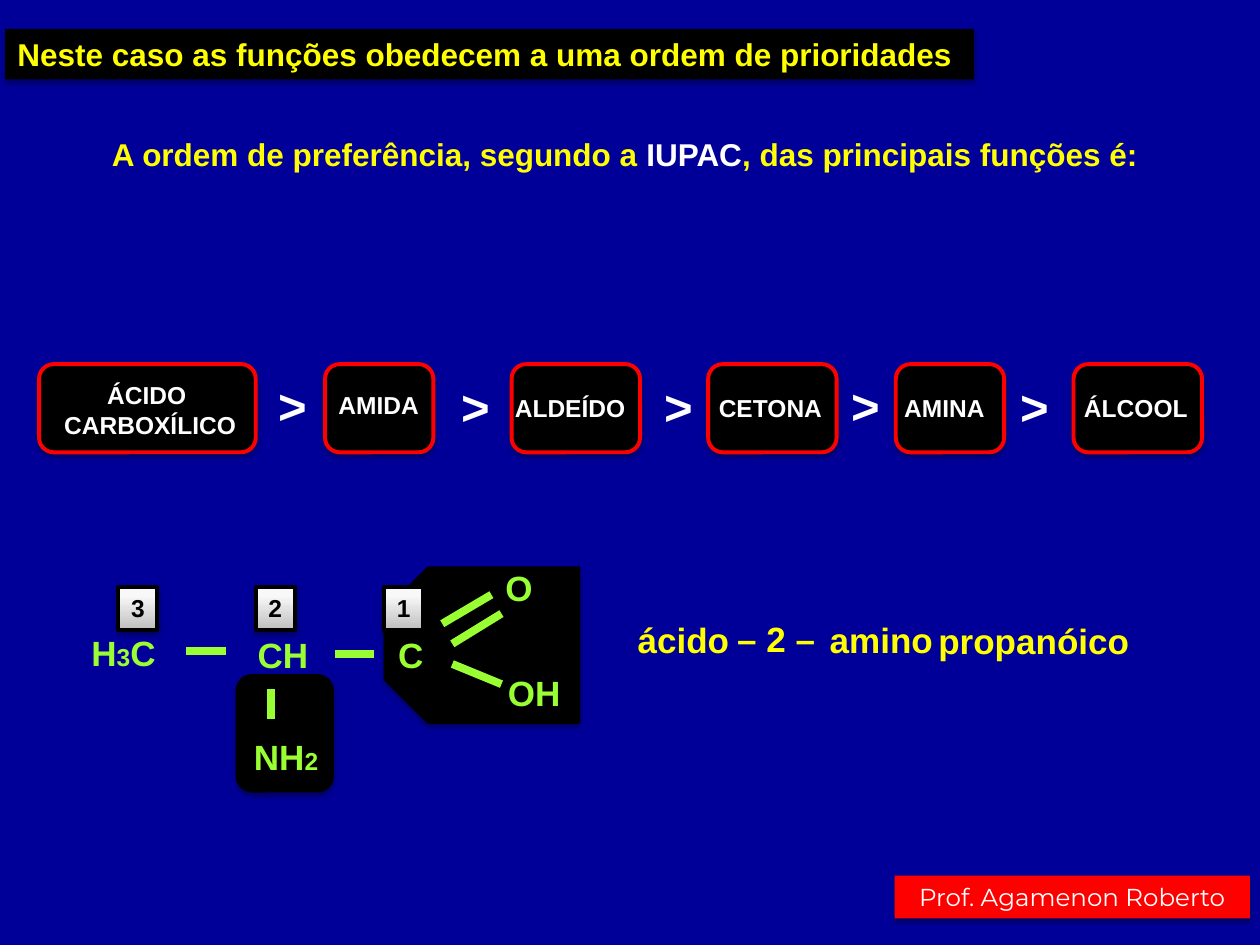
"""Builds the slide on the order of priority of organic functions."""
from lxml import etree
from pptx import Presentation
from pptx.dml.color import RGBColor
from pptx.enum import shapes, text
from pptx.oxml import parse_xml
from pptx.oxml.ns import qn
from pptx.util import Inches, Pt

NAVY = RGBColor(0x00, 0x00, 0x99)
BLACK = RGBColor(0x00, 0x00, 0x00)
WHITE = RGBColor(0xFF, 0xFF, 0xFF)
RED = RGBColor(0xFF, 0x00, 0x00)
YELLOW = RGBColor(0xFF, 0xFF, 0x00)
GREEN = RGBColor(0x99, 0xFF, 0x33)
GREY = RGBColor(0xBE, 0xBE, 0xBE)
PALE = RGBColor(0xF8, 0xF8, 0xF8)
SHADOW = (
    '<a:effectLst xmlns:a="http://schemas.openxmlformats.org/drawingml/2006/main">'
    '<a:outerShdw blurRad="40000" dist="23000" dir="5400000" rotWithShape="0">'
    '<a:srgbClr val="000000"><a:alpha val="35000"/></a:srgbClr>'
    '</a:outerShdw></a:effectLst>'
)

prs = Presentation()
prs.slide_width, prs.slide_height = Inches(10), Inches(7.5)
slide = prs.slides.add_slide(prs.slide_layouts[6])
slide.background.fill.solid()
slide.background.fill.fore_color.rgb = NAVY


def add_panel(kind, at, fill=BLACK, line=None):
    panel = slide.shapes.add_shape(kind, *map(Inches, at))
    panel.fill.solid()
    panel.fill.fore_color.rgb = fill
    if line is None:
        panel.line.fill.background()
    else:
        panel.line.color.rgb = line
        panel.line.width = Pt(2.25)
    panel._element.spPr.append(parse_xml(SHADOW))
    return panel


def write(content, at=None, panel=None, size=20, color=GREEN, bold=True, font="Arial",
          align=text.PP_ALIGN.CENTER, anchor=text.MSO_ANCHOR.TOP):
    """Content is a string, or a list of (text, size, color) runs."""
    holder = panel or slide.shapes.add_textbox(*map(Inches, at))
    frame = holder.text_frame
    frame.word_wrap = False
    frame.auto_size = text.MSO_AUTO_SIZE.SHAPE_TO_FIT_TEXT
    frame.vertical_anchor = anchor
    if isinstance(content, str):
        lines = [[(line, size, color)] for line in content.split("\n")]
    else:
        lines = [content]
    for i, line in enumerate(lines):
        paragraph = frame.add_paragraph() if i else frame.paragraphs[0]
        paragraph.alignment = align
        for words, run_size, run_color in line:
            run = paragraph.add_run()
            run.text = words
            run.font.name, run.font.bold = font, bold
            run.font.size = Pt(run_size)
            run.font.color.rgb = run_color


RECT = shapes.MSO_SHAPE.RECTANGLE
ROUNDED = shapes.MSO_SHAPE.ROUNDED_RECTANGLE
heading = dict(size=18, color=YELLOW, align=text.PP_ALIGN.JUSTIFY, anchor=text.MSO_ANCHOR.MIDDLE)

title = add_panel(RECT, (0.04, 0.23, 7.69, 0.4))
write("Neste caso as funções obedecem a uma ordem de prioridades", panel=title, **heading)
write([("A ordem de preferência, segundo a ", 18, YELLOW), ("IUPAC", 18, WHITE),
       (", das principais funções é:", 18, YELLOW)], at=(0.79, 1.02, 8.42, 0.4), **heading)

functions = [
    ("ÁCIDO\n CARBOXÍLICO", 0.31, 1.72, (0.35, 2.97, 1.63, 0.57)),
    ("AMIDA", 2.58, 0.86, (2.58, 3.05, 0.85, 0.34)),
    ("ALDEÍDO", 4.06, 1.02, (3.98, 3.07, 1.09, 0.34)),
    ("CETONA", 5.62, 1.02, (5.6, 3.07, 1.03, 0.34)),
    ("AMINA", 7.11, 0.86, (7.07, 3.07, 0.85, 0.34)),
    ("ÁLCOOL", 8.52, 1.02, (8.5, 3.07, 1.03, 0.34)),
]
for name, left, width, label_at in functions:
    add_panel(ROUNDED, (left, 2.89, width, 0.7), line=RED)
    write(name, at=label_at, size=14, color=WHITE)
for left, top in [(2.11, 2.93), (3.56, 2.94), (5.17, 2.94), (6.66, 2.93), (8, 2.94)]:
    write(">", at=(left, top, 0.43, 0.57), size=28, color=WHITE)

for part, left, top, width in [("ácido", 4.96, 4.86, 0.93), ("amino", 6.48, 4.86, 1.03),
                               ("– 2 –", 5.75, 4.85, 0.82), ("propanóico", 7.34, 4.87, 1.73)]:
    write(part, at=(left, top, width, 0.44), color=YELLOW)

add_panel(ROUNDED, (1.87, 5.35, 0.78, 0.94))
acid_group = add_panel(shapes.MSO_SHAPE.SNIP_2_SAME_RECTANGLE, (3.2, 4.34, 1.25, 1.56))
acid_group.rotation = 270
acid_group.adjustments[0] = 0.28
acid_group.adjustments[1] = 0

atoms = [
    ("C", 3.06, 4.98, 0.4),
    ("O", 3.91, 4.45, 0.42),
    ("CH", 1.94, 4.98, 0.61),
    ("OH", 3.93, 5.28, 0.62),
    ([("NH", 20, GREEN), ("2", 14, GREEN)], 1.91, 5.79, 0.72),
    ([("H", 20, GREEN), ("3", 14, GREEN), ("C", 20, GREEN)], 0.62, 4.96, 0.72),
]
for symbol, left, top, width in atoms:
    write(symbol, at=(left, top, width, 0.44))

bonds = [
    (3.59, 5.11, 3.98, 4.87),
    (3.51, 4.95, 3.9, 4.72),
    (3.59, 5.27, 3.98, 5.43),
    (2.66, 5.19, 2.97, 5.19),
    (1.48, 5.17, 1.79, 5.17),
    (2.15, 5.47, 2.15, 5.71),
]
for ends in bonds:
    bond = slide.shapes.add_connector(shapes.MSO_CONNECTOR.STRAIGHT, *map(Inches, ends))
    bond.line.color.rgb = GREEN
    bond.line.width = Pt(4.5)
    etree.SubElement(bond._element.spPr, qn("a:effectLst"))

for number, left in [("1", 3.05), ("2", 2.03), ("3", 0.94)]:
    carbon = add_panel(RECT, (left, 4.66, 0.31, 0.34), line=BLACK)
    carbon.fill.gradient()
    carbon.fill.gradient_angle = 90
    for stop, shade, position in zip(carbon.fill.gradient_stops, (GREY, PALE), (0, 0.8)):
        stop.color.rgb = shade
        stop.position = position
    write(number, panel=carbon, size=14, color=BLACK)

author = add_panel(RECT, (7.1, 6.95, 2.82, 0.34), fill=RED)
write("Prof. Agamenon Roberto", panel=author, size=14, color=WHITE, bold=False, font="Montserrat")

prs.save("out.pptx")
